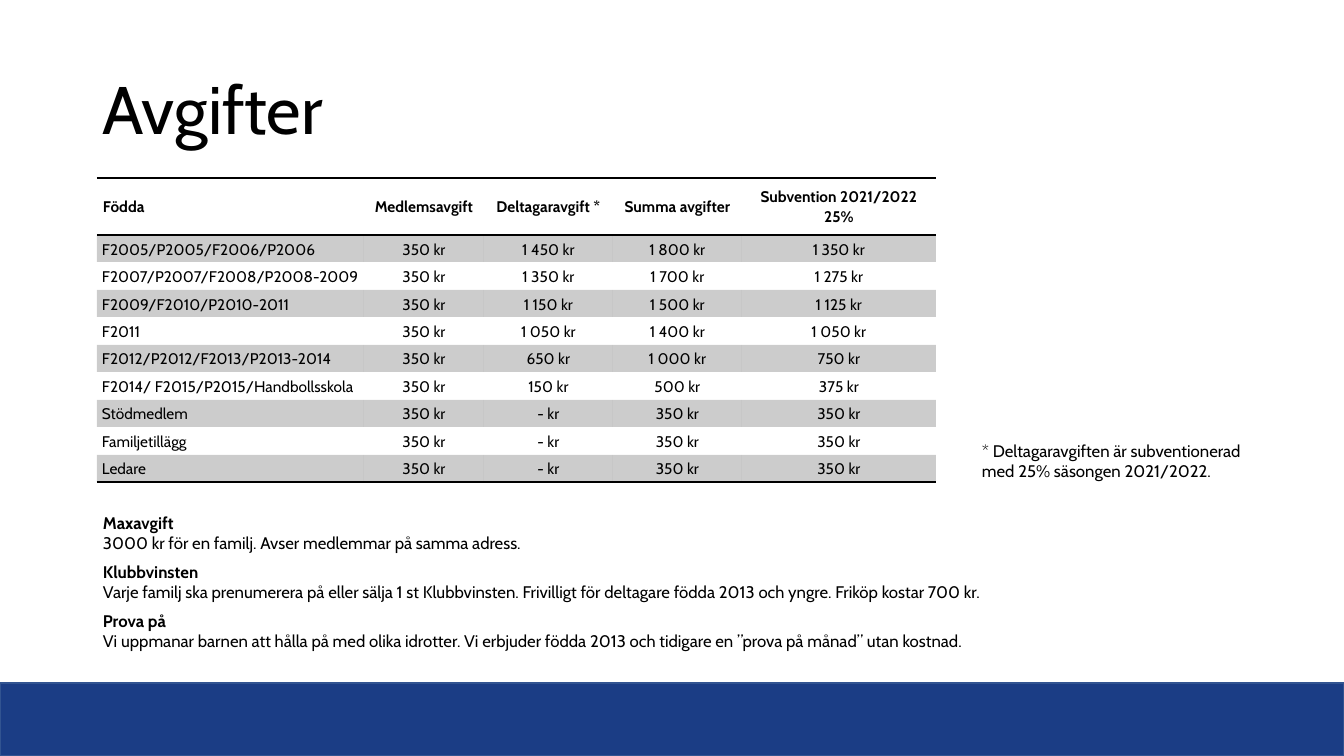
from copy import deepcopy

from lxml import etree
from pptx import Presentation
from pptx import util as u
from pptx.dml.color import RGBColor
from pptx.enum import shapes, text
from pptx.oxml.ns import qn

PX = 914400 / 100.8
COLORS = {"ink": "000000", "band": "1B3D85", "band_edge": "325491"}
NO_GRID_STYLE = "{2D5ABB26-0587-4C30-8999-92F81FD0307C}"
LEFT, CENTER = text.PP_ALIGN.LEFT, text.PP_ALIGN.CENTER


def px(length):
    return u.Emu(round(length * PX))


def rgb(name):
    return RGBColor.from_string(COLORS[name])


class FeeSlide:
    font = "Cabin"

    def __init__(self, prs):
        self.slide = prs.slides.add_slide(prs.slide_layouts[6])

    def set_words(self, paragraph, words, size, bold=False, bold_first=False):
        paragraph.text = words
        for i, run in enumerate(paragraph.runs):
            run.font.name = self.font
            run.font.size = u.Pt(size)
            run.font.bold = bold or (bold_first and i == 0)
            run.font.color.rgb = rgb("ink")
        # A line break keeps the size of the line it ends
        for line_break in paragraph._p.findall(qn("a:br")):
            line_break.append(deepcopy(paragraph.runs[0]._r.rPr))

    def band(self, x, y, w, h):
        band = self.slide.shapes.add_shape(
            shapes.MSO_SHAPE.RECTANGLE, *map(px, (x, y, w, h)))
        band.shadow.inherit = False
        band.fill.solid()
        band.fill.fore_color.rgb = rgb("band")
        band.line.color.rgb = rgb("band_edge")
        band.line.width = u.Pt(1)

    def text(self, x, y, w, h, lines, size, anchor=text.MSO_ANCHOR.TOP,
             spacing=1.0, gap=0, bold_first=False):
        frame = self.slide.shapes.add_textbox(*map(px, (x, y, w, h))).text_frame
        frame.word_wrap = True
        frame.vertical_anchor = anchor
        for i, line in enumerate(lines):
            paragraph = frame.add_paragraph() if i else frame.paragraphs[0]
            self.set_words(paragraph, line, size, bold_first=bold_first)
            paragraph.line_spacing = spacing
            if i < len(lines) - 1:
                paragraph.space_after = u.Pt(gap)

    def border(self, cell, side, width):
        line = etree.Element(qn("a:ln" + side), w=str(u.Pt(width)))
        fill = etree.SubElement(line, qn("a:solidFill"))
        etree.SubElement(fill, qn("a:srgbClr"), val=COLORS["ink"])
        cell._tc.get_or_add_tcPr().insert(0, line)

    def shade(self, cell, percent):
        cell.fill.solid()
        cell.fill.fore_color.rgb = rgb("ink")
        ink = cell._tc.tcPr.find(".//" + qn("a:srgbClr"))
        etree.SubElement(ink, qn("a:alpha"), val=str(percent * 1000))

    def table(self, x, y, widths, heights, rows):
        frame = self.slide.shapes.add_table(
            len(rows), len(widths),
            *map(px, (x, y, sum(widths), sum(heights))))
        table = frame.table
        table.first_row = table.horz_banding = False
        table._tbl.tblPr.find(qn("a:tableStyleId")).text = NO_GRID_STYLE
        for column, width in zip(table.columns, widths):
            column.width = px(width)
        for r, (values, height) in enumerate(zip(rows, heights)):
            table.rows[r].height = px(height)
            header, last = r == 0, r == len(rows) - 1
            for c, value in enumerate(values):
                cell = table.cell(r, c)
                cell.margin_left = cell.margin_right = px(6 if header else 5)
                cell.margin_top = cell.margin_bottom = 0
                cell.vertical_anchor = text.MSO_ANCHOR.MIDDLE
                paragraph = cell.text_frame.paragraphs[0]
                self.set_words(paragraph, value, 11, bold=header)
                paragraph.alignment = CENTER if c else LEFT
                paragraph.line_spacing = 1.07 if header else 1.11
                if r % 2:
                    self.shade(cell, 20)
                else:
                    cell.fill.background()
                if header or last:
                    self.border(cell, "B", 1.5 if last else 1)
                if header:
                    self.border(cell, "T", 1)


HEADINGS = ["Födda", "Medlemsavgift", "Deltagaravgift *", "Summa avgifter",
            "Subvention 2021/2022\v25%"]
MEMBER_FEE = "350"
# Born, participant fee, total, total with subsidy
FEES = [
    ("F2005/P2005/F2006/P2006", "1 450", "1 800", "1 350"),
    ("F2007/P2007/F2008/P2008-2009", "1 350", "1 700", "1 275"),
    ("F2009/F2010/P2010-2011", "1 150", "1 500", "1 125"),
    ("F2011", "1 050", "1 400", "1 050"),
    ("F2012/P2012/F2013/P2013-2014", "650", "1 000", "750"),
    ("F2014/ F2015/P2015/Handbollsskola", "150", "500", "375"),
    ("Stödmedlem", "-", "350", "350"),
    ("Familjetillägg", "-", "350", "350"),
    ("Ledare", "-", "350", "350"),
]
RULES = [
    "Maxavgift\v3000 kr för en familj. Avser medlemmar på samma adress.",
    "Klubbvinsten\vVarje familj ska prenumerera på eller sälja 1 st "
    "Klubbvinsten. Frivilligt för deltagare födda 2013 och yngre. "
    "Friköp kostar 700 kr.",
    "Prova på\vVi uppmanar barnen att hålla på med olika idrotter. Vi erbjuder "
    "födda 2013 och tidigare en ”prova på månad” utan kostnad.",
]


def kronor(amount):
    # An en space sets the dash apart from the unit
    return amount + (" kr" if amount == "-" else " kr")


def main():
    prs = Presentation()
    prs.slide_width, prs.slide_height = px(1344), px(756)
    page = FeeSlide(prs)

    # Footer band and title
    page.band(0, 683, 1344, 73)
    page.text(93, 40, 1102, 146, ["Avgifter"], 48,
              anchor=text.MSO_ANCHOR.MIDDLE, spacing=0.9)

    # Fee table
    rows = [HEADINGS] + [[born, *map(kronor, (MEMBER_FEE, *amounts))]
                         for born, *amounts in FEES]
    heights = [57] + [27 + i % 2 for i in range(len(FEES))]
    page.table(97, 178, [267, 120, 129, 129, 194], heights, rows)

    # Rules and footnote
    page.text(93, 508, 1251, 149, RULES, 12, gap=6, bold_first=True)
    page.text(972, 436, 297, 72,
              ["* Deltagaravgiften är subventionerad med 25% säsongen 2021/2022."],
              12)

    prs.save("out.pptx")


if __name__ == "__main__":
    main()
